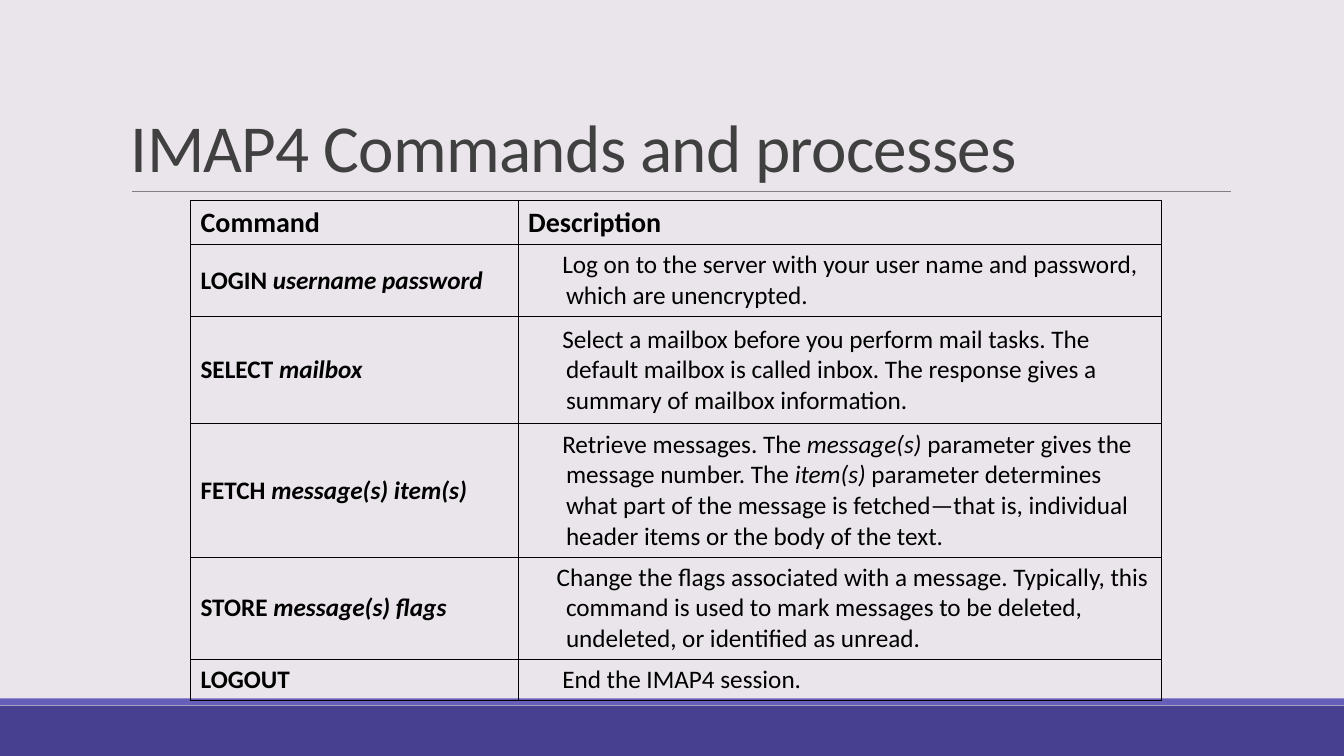
import pptx
import pptx.util
import pptx.dml.color
import pptx.enum.shapes
import pptx.enum.text
import pptx.oxml
import pptx.oxml.ns
from dataclasses import dataclass

Pt = pptx.util.Pt

TITLE = "IMAP4 Commands and processes"
HEAD = ("Command", "Description")
# Text between asterisks is italic.
ROWS = [
    ("LOGIN *username password*",
     "Log on to the server with your user name and password, "
     "which are unencrypted."),
    ("SELECT *mailbox*",
     "Select a mailbox before you perform mail tasks. The default mailbox "
     "is called inbox. The response gives a summary of mailbox information."),
    ("FETCH *message(s) item(s)*",
     "Retrieve messages. The *message(s)* parameter gives the message number. "
     "The *item(s)* parameter determines what part of the message is "
     "fetched—that is, individual header items or the body of the text."),
    ("STORE *message(s) flags*",
     "Change the flags associated with a message. Typically, this command is "
     "used to mark messages to be deleted, undeleted, or identified as unread."),
    ("LOGOUT", "End the IMAP4 session."),
]
WIDTHS = (234, 459.4)
HEIGHTS = (31.5, 51.4, 76.6, 95.2, 73, 29.2)
# First-line offsets of the descriptions, by row
HANGS = (0, -2.7, -2.7, -2.7, -6.7, -2.7)


@dataclass
class Theme:
    font: str = "Calibri"
    back: str = "EAE5EB"
    band: str = "474091"
    strip: str = "665EB8"
    rule: str = "808080"
    title: str = "404040"
    text: str = "000000"
    big: float = 48
    head: float = 20
    body: float = 18


theme = Theme()


def color(code):
    return pptx.dml.color.RGBColor.from_string(code)


def style(para, size, code, bold=False):
    font = para.font
    font.name, font.size, font.bold = theme.font, Pt(size), bold
    font.color.rgb = color(code)


def add_bar(slide, top, height, code):
    bar = slide.shapes.add_shape(
        pptx.enum.shapes.MSO_SHAPE.RECTANGLE, 0, Pt(top), Pt(960), Pt(height))
    bar.shadow.inherit = False
    bar.fill.solid()
    bar.fill.fore_color.rgb = color(code)
    bar.line.fill.background()


def add_rule(slide):
    rule = slide.shapes.add_connector(
        pptx.enum.shapes.MSO_CONNECTOR.STRAIGHT,
        Pt(94.3), Pt(136.6), Pt(879), Pt(136.6))
    rule.line.color.rgb = color(theme.rule)
    rule.line.width = Pt(0.5)
    rule._element.spPr.append(pptx.oxml.parse_xml(
        f'<a:effectLst {pptx.oxml.ns.nsdecls("a")}/>'))


def add_title(slide):
    box = slide.shapes.add_textbox(Pt(86.4), Pt(22.3), Pt(792), Pt(114.5))
    frame = box.text_frame
    frame.word_wrap = True
    frame.vertical_anchor = pptx.enum.text.MSO_ANCHOR.BOTTOM
    para = frame.paragraphs[0]
    run = para.add_run()
    run.text = TITLE
    run.font._element.set("spc", "-50")
    para.line_spacing = 0.85
    style(para, theme.big, theme.title)


def add_edges(cell):
    props = cell._tc.get_or_add_tcPr()
    for spot, side in enumerate("LRTB"):
        props.insert(spot, pptx.oxml.parse_xml(
            f'<a:ln{side} {pptx.oxml.ns.nsdecls("a")} w="{Pt(1)}"><a:solidFill>'
            f'<a:srgbClr val="{theme.text}"/></a:solidFill></a:ln{side}>'))


def fill_cell(cell, text, size, bold, left, hang):
    cell.fill.background()
    add_edges(cell)
    cell.vertical_anchor = pptx.enum.text.MSO_ANCHOR.MIDDLE
    para = cell.text_frame.paragraphs[0]
    for spot, part in enumerate(text.split("*")):
        if part:
            run = para.add_run()
            run.text = part
            if spot % 2:
                run.font.italic = True
    style(para, size, theme.text, bold)
    props = para._p.get_or_add_pPr()
    props.set("marL", str(Pt(left)))
    props.set("indent", str(Pt(hang)))


def add_grid(slide):
    lines = [HEAD, *ROWS]
    grid = slide.shapes.add_table(
        len(lines), len(HEAD), Pt(136.1), Pt(143.3),
        Pt(sum(WIDTHS)), Pt(sum(HEIGHTS))).table
    grid.first_row = grid.horz_banding = False
    for col, width in zip(grid.columns, WIDTHS):
        col.width = Pt(width)
    for r, line in enumerate(lines):
        grid.rows[r].height = Pt(HEIGHTS[r])
        for c, text in enumerate(line):
            head = r == 0
            plain = c == 1 and not head
            fill_cell(grid.cell(r, c), text, theme.head if head else theme.body,
                      not plain, 27, HANGS[r] if plain else -27)


def main():
    deck = pptx.Presentation()
    deck.slide_width, deck.slide_height = Pt(960), Pt(540)
    slide = deck.slides.add_slide(deck.slide_layouts[6])
    slide.background.fill.solid()
    slide.background.fill.fore_color.rgb = color(theme.back)
    add_bar(slide, 504, 36, theme.band)
    add_bar(slide, 498.8, 5, theme.strip)
    add_rule(slide)
    add_title(slide)
    add_grid(slide)
    deck.save("out.pptx")


if __name__ == "__main__":
    main()
